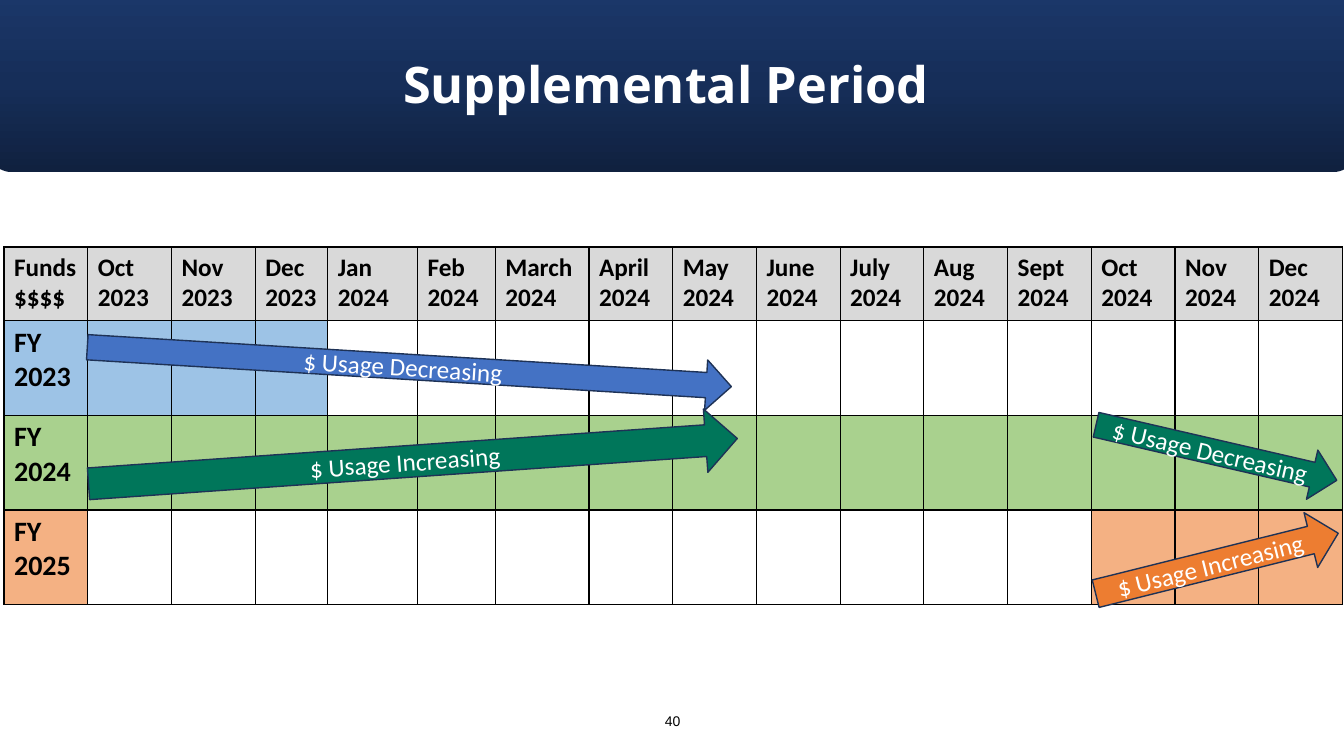
import copy

import pptx
import pptx.dml.color
import pptx.enum.shapes
import pptx.enum.text
import pptx.oxml
import pptx.oxml.ns
import pptx.util

BLACK, WHITE, NAVY = "000000", "FFFFFF", "1E3256"
GREY, BLUE, GREEN, ORANGE = "D9D9D9", "9DC3E6", "A9D18E", "F4B183"


def rgb(value):
    return pptx.dml.color.RGBColor.from_string(value)


class SlideBuilder:
    body_font = "Calibri"
    title_font = "Open Sans"
    number_font = "Arial"

    def __init__(self, width, height):
        self.deck = pptx.Presentation()
        self.deck.slide_width = pptx.util.Inches(width)
        self.deck.slide_height = pptx.util.Inches(height)
        self.slide = self.deck.slides.add_slide(self.deck.slide_layouts[5])

    def across(self, percent):
        return round(self.deck.slide_width * percent / 100)

    def down(self, percent):
        return round(self.deck.slide_height * percent / 100)

    def box(self, left, top, width, height):
        return self.across(left), self.down(top), self.across(width), self.down(height)

    def add_lines(self, frame, lines, size, color, font, bold=False, centered=False):
        frame.word_wrap = True
        for index, line in enumerate(lines):
            paragraph = frame.add_paragraph() if index else frame.paragraphs[0]
            if centered:
                paragraph.alignment = pptx.enum.text.PP_ALIGN.CENTER
            run = paragraph.add_run()
            run.text = line
            run.font.size = pptx.util.Pt(size)
            run.font.name = font
            run.font.bold = bold
            run.font.color.rgb = rgb(color)
        if centered:
            frame.vertical_anchor = pptx.enum.text.MSO_ANCHOR.MIDDLE

    def banner(self, text, area, colors):
        shapes = self.slide.shapes
        band = shapes.add_shape(
            pptx.enum.shapes.MSO_SHAPE.ROUNDED_RECTANGLE, *self.box(*area))
        band.shadow.inherit = False
        band.line.fill.background()
        band.fill.gradient()
        band.fill.gradient_angle = 90
        stop_list = band._element.spPr.find(".//" + pptx.oxml.ns.qn("a:gsLst"))
        stop_list.insert(1, copy.deepcopy(stop_list[0]))
        for stop, color, position in zip(band.fill.gradient_stops, colors, (0, 0.5, 1)):
            stop.color.rgb = rgb(color)
            stop.position = position
        title = shapes.title
        title.left, title.top, title.width, title.height = self.box(*area)
        title.text_frame.auto_size = pptx.enum.text.MSO_AUTO_SIZE.NONE
        self.add_lines(title.text_frame, [text], 36, WHITE, self.title_font, True, True)
        band._element.addnext(title._element)

    def outline(self, cell):
        properties = cell._tc.get_or_add_tcPr()
        for index, side in enumerate(("lnL", "lnR", "lnT", "lnB")):
            properties.insert(index, pptx.oxml.parse_xml(
                f'<a:{side} {pptx.oxml.ns.nsdecls("a")} w="12700"><a:solidFill>'
                f'<a:srgbClr val="{BLACK}"/></a:solidFill></a:{side}>'))

    def calendar(self, left, top, columns, rows, months, years):
        area = self.box(left, top, sum(columns), sum(rows))
        table = self.slide.shapes.add_table(len(rows), len(columns), *area).table
        table.first_row = table.horz_banding = False
        for column, width in zip(table.columns, columns):
            column.width = self.across(width)
        for row, height in zip(table.rows, rows):
            row.height = self.down(height)
        for index, lines in enumerate(months):
            self.add_lines(table.cell(0, index).text_frame, lines, 18, BLACK, self.body_font, True)
        shading = {(0, index): GREY for index in range(len(columns))}
        for row, (year, color, active) in enumerate(years, 1):
            self.add_lines(table.cell(row, 0).text_frame, [year], 20, BLACK, self.body_font, True)
            shading.update({(row, column): color for column in (0, *active)})
        for row in range(len(rows)):
            for column in range(len(columns)):
                cell = table.cell(row, column)
                if (row, column) in shading:
                    cell.fill.solid()
                    cell.fill.fore_color.rgb = rgb(shading[row, column])
                else:
                    cell.fill.background()
                self.outline(cell)

    def trend(self, text, area, angle, color):
        arrow = self.slide.shapes.add_shape(
            pptx.enum.shapes.MSO_SHAPE.RIGHT_ARROW, *self.box(*area))
        arrow.shadow.inherit = False
        arrow.rotation = angle
        arrow.fill.solid()
        arrow.fill.fore_color.rgb = rgb(color)
        arrow.line.color.rgb = rgb(NAVY)
        arrow.line.width = pptx.util.Pt(1)
        self.add_lines(arrow.text_frame, [text], 18, WHITE, self.body_font, centered=True)

    def page_number(self, text, area):
        number = self.slide.shapes.add_textbox(*self.box(*area))
        self.add_lines(number.text_frame, [text], 10, BLACK, self.number_font, centered=True)


def main():
    builder = SlideBuilder(13.33, 7.5)
    month_names = ("Oct Nov Dec Jan Feb March April May June July "
                   "Aug Sept Oct Nov Dec").split()
    months = [("Funds", "$$$$")] + [
        (name, "2023" if index < 3 else "2024") for index, name in enumerate(month_names)]
    columns = [6.23] * 3 + [5.4, 6.68, 5.78, 6.98] + [6.23] * 9
    fiscal_years = [
        ("FY 2023", BLUE, range(1, 4)),
        ("FY 2024", GREEN, range(1, 16)),
        ("FY 2025", ORANGE, range(13, 16)),
    ]
    builder.calendar(0.3, 32.67, columns, [9.73] + [12.53] * 3, months, fiscal_years)
    builder.page_number("40", (33.16, 92.67, 33.76, 5.33))
    falling, rising = "$ Usage Decreasing", "$ Usage Increasing"
    for trend in (
        (falling, (6.45, 45.2, 48.01, 6.67), 3.5, "4472C4"),
        (rising, (6.53, 56.8, 48.39, 8.4), 356, "00765A"),
        (falling, (81.32, 56.53, 18.38, 6.67), 13, "00765A"),
        (rising, (81.25, 70.8, 18.6, 7.47), 346, "ED7D31"),
    ):
        builder.trend(*trend)
    builder.banner("Supplemental Period ", (-1.2, -0.8, 102.48, 23.6),
                   ("10213F", "162E59", "1B3769"))
    builder.deck.save("out.pptx")


if __name__ == "__main__":
    main()
